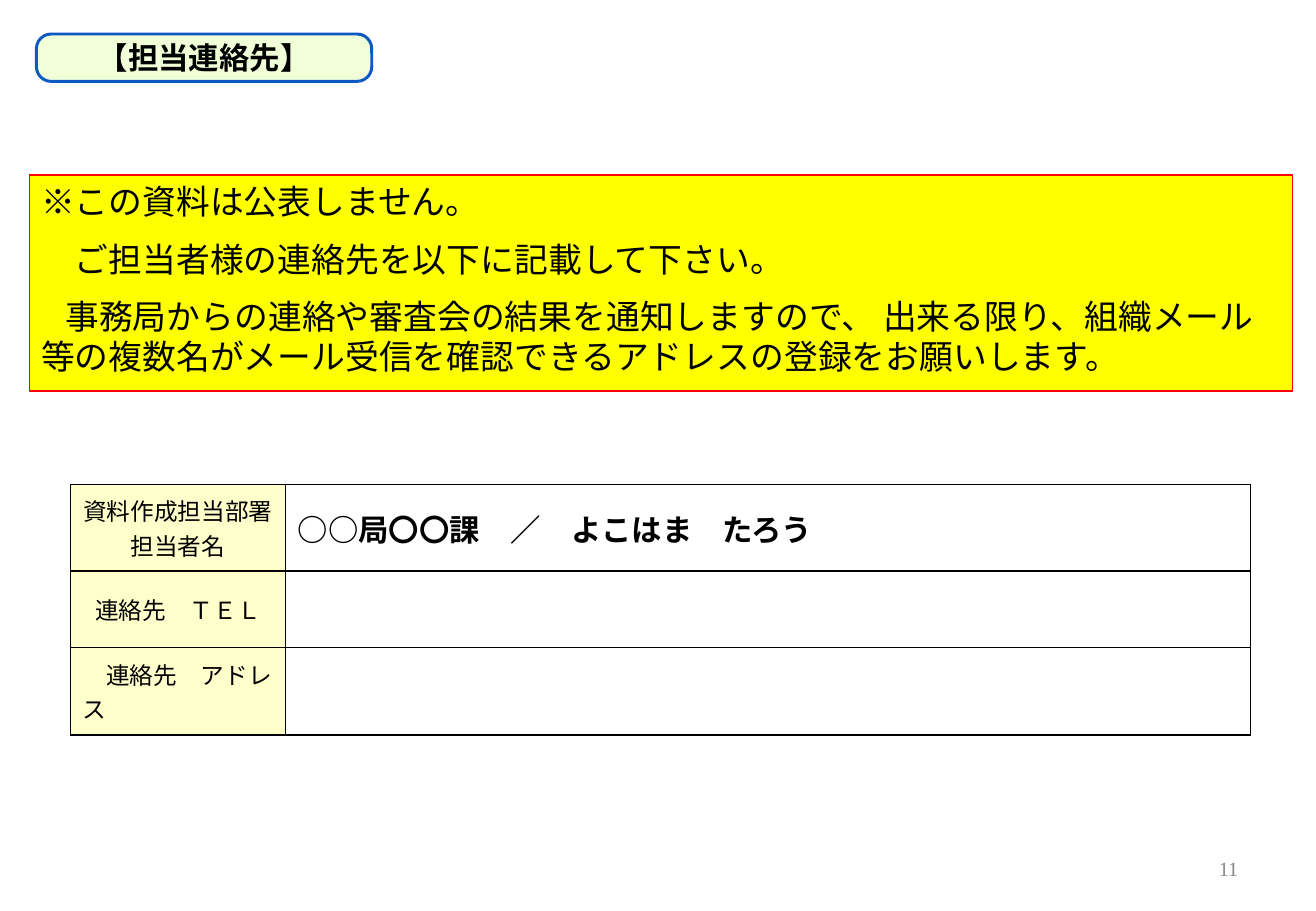
from lxml import etree
from pptx import Presentation
from pptx import util as u
from pptx.dml.color import RGBColor
from pptx.enum import lang, shapes, text
from pptx.oxml import ns

PX = 9144  # EMU per px, 100 px to the inch
SERIF, ROBOTO = "Times New Roman", "Roboto"
CENTER, LEFT, RIGHT = text.PP_ALIGN.CENTER, text.PP_ALIGN.LEFT, text.PP_ALIGN.RIGHT

NOTICE = [
    ("※この資料は公表しません。", "Noto Sans CJK JP"),
    ("　ご担当者様の連絡先を以下に記載して下さい。", "Noto Sans CJK JP"),
    ("事務局からの連絡や審査会の結果を通知しますので、 出来る限り、組織メール"
     "等の複数名がメール受信を確認できるアドレスの登録をお願いします。", ROBOTO),
]
CONTACT_ROWS = [  # height, label lines, font, alignment, value
    (71, ["資料作成担当部署", "担当者名"], SERIF, CENTER, "○○局〇〇課　／　よこはま　たろう"),
    (63, ["連絡先　ＴＥＬ"], ROBOTO, CENTER, ""),
    (72, ["　連絡先　アドレス"], SERIF, LEFT, ""),
]


def px(*lengths):
    return [u.Emu(length * PX) for length in lengths]


def color(value):
    return RGBColor.from_string(value)


def paint(item, value):
    item.fill.solid()
    item.fill.fore_color.rgb = color(value)


def write(frame, lines, font, size, align=LEFT, bold=False, ink="000000"):
    """Fill a text frame with one paragraph per line."""
    frame.text = "\n".join(lines)
    for paragraph in frame.paragraphs:
        paragraph.alignment = align
        paragraph.font.name = font
        paragraph.font.size = u.Pt(size)
        paragraph.font.bold = bold
        paragraph.font.color.rgb = color(ink)
        paragraph.font.language_id = lang.MSO_LANGUAGE_ID.JAPANESE


def add_panel(slide, kind, box, fill, line, width):
    panel = slide.shapes.add_shape(kind, *px(*box))
    panel.shadow.inherit = False
    paint(panel, fill)
    panel.line.color.rgb = color(line)
    panel.line.width = u.Pt(width)
    return panel


def add_title(slide, box):
    panel = add_panel(slide, shapes.MSO_SHAPE.ROUNDED_RECTANGLE, box, "F0FFD7", "0E58C4", 1.75)
    panel.adjustments[0] = 0.31
    title = slide.shapes.title
    title.left, title.top, title.width, title.height = px(*box)
    slide.shapes._spTree.append(title._element)
    frame = title.text_frame
    write(frame, ["【担当連絡先】"], "Arial", 18, CENTER, bold=True)
    frame.auto_size = text.MSO_AUTO_SIZE.NONE
    frame.vertical_anchor = text.MSO_ANCHOR.MIDDLE


def add_notice(slide, box):
    panel = add_panel(slide, shapes.MSO_SHAPE.RECTANGLE, box, "FFFF00", "FF0000", 0.75)
    frame = panel.text_frame
    frame.word_wrap = True
    frame.vertical_anchor = text.MSO_ANCHOR.TOP
    write(frame, [line for line, _ in NOTICE], ROBOTO, 20)
    for paragraph, (_, font) in zip(frame.paragraphs, NOTICE):
        paragraph.font.name = font
        paragraph.space_before = u.Pt(10)
    properties = frame.paragraphs[-1]._p.get_or_add_pPr()
    properties.set("marL", "0")
    properties.set("indent", str(20 * PX))


def style_cell(cell, fill):
    """Draw black one-point borders, then the fill."""
    properties = cell._tc.get_or_add_tcPr()
    for side in ("lnL", "lnR", "lnT", "lnB"):
        border = etree.SubElement(properties, ns.qn(f"a:{side}"), w=str(u.Pt(1)))
        solid = etree.SubElement(border, ns.qn("a:solidFill"))
        etree.SubElement(solid, ns.qn("a:srgbClr"), val="000000")
    paint(cell, fill)
    cell.vertical_anchor = text.MSO_ANCHOR.MIDDLE


def add_contacts(slide, box):
    table = slide.shapes.add_table(len(CONTACT_ROWS), 2, *px(*box)).table
    table.first_row = table.horz_banding = False
    for column, width in zip(table.columns, px(177, 794)):
        column.width = width
    for row, (height, label, font, align, value) in zip(table.rows, CONTACT_ROWS):
        row.height = px(height)[0]
        label_cell, value_cell = row.cells
        style_cell(label_cell, "FFFFCC")
        style_cell(value_cell, "FFFFFF")
        write(label_cell.text_frame, label, font, 14, align)
        if value:
            write(value_cell.text_frame, [value], SERIF, 18, bold=True)


def add_page_number(slide, box):
    frame = slide.shapes.add_textbox(*px(*box)).text_frame
    frame.word_wrap = True
    frame.vertical_anchor = text.MSO_ANCHOR.MIDDLE
    write(frame, ["11"], SERIF, 12, RIGHT, ink="898989")


def main():
    presentation = Presentation()
    presentation.slide_width, presentation.slide_height = px(1083, 750)
    slide = presentation.slides.add_slide(presentation.slide_layouts.get_by_name("Title Only"))
    add_page_number(slide, (776, 695, 253, 40))
    add_contacts(slide, (58, 399, 971, 206))
    add_notice(slide, (24, 144, 1040, 178))
    add_title(slide, (30, 28, 276, 39))
    presentation.save("out.pptx")


if __name__ == "__main__":
    main()
